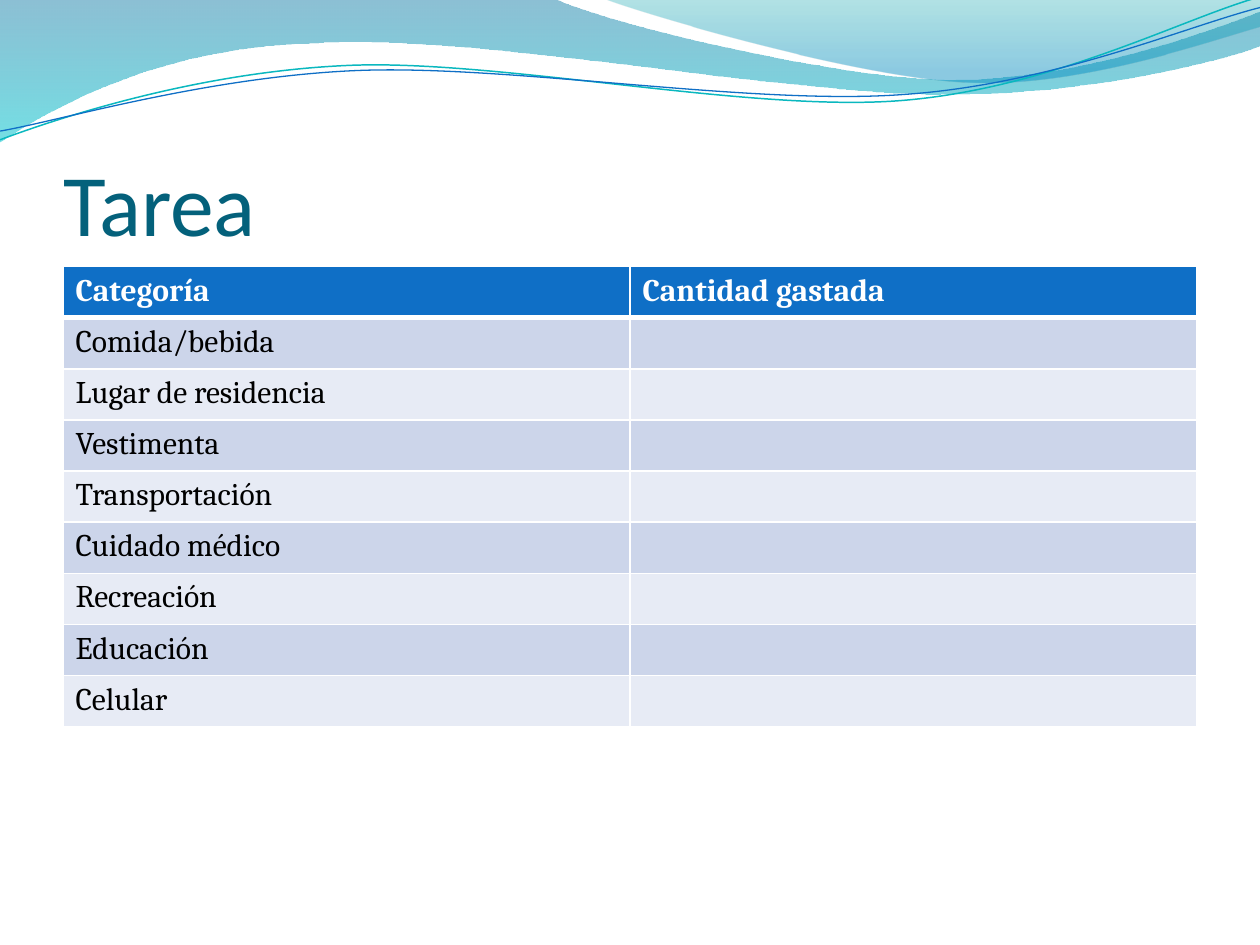
from lxml import etree
from pptx import Presentation
from pptx.dml import color
from pptx.enum import text
from pptx.oxml import ns
from pptx.util import Pt

ROWS = [
    ("Categoría", "Cantidad gastada"),
    ("Comida/bebida", ""),
    ("Lugar de residencia", ""),
    ("Vestimenta", ""),
    ("Transportación", ""),
    ("Cuidado médico", ""),
    ("Recreación", ""),
    ("Educación", ""),
    ("Celular", ""),
]


def rgb(code):
    return color.RGBColor.from_string(code)


def line(point):
    return [[point]]


def curve(*points):
    return [points[i:i + 3] for i in range(0, len(points), 3)]


def outline(slide, left, top, start, segments, close):
    builder = slide.shapes.build_freeform(Pt(start[0]), Pt(start[1]), scale=1.0)
    vertices = [(Pt(x), Pt(y)) for segment in segments for x, y in segment]
    builder.add_line_segments(vertices, close=close)
    shape = builder.convert_to_shape(Pt(left), Pt(top))
    shape.shadow.inherit = False
    steps = iter(list(shape._element.iter(ns.qn("a:lnTo"))))
    for segment in segments:
        first, *others = [next(steps) for _ in segment]
        if others:
            bezier = etree.Element(ns.qn("a:cubicBezTo"))
            first.addprevious(bezier)
            for step in (first, *others):
                bezier.append(step[0])
                step.getparent().remove(step)
    return shape


def add_wave(slide, left, top, start, segments, stops):
    wave = outline(slide, left, top, start, segments, True)
    wave.line.fill.background()
    wave.fill.gradient()
    wave.fill.gradient_angle = 270
    for stop, (position, code, _) in zip(wave.fill.gradient_stops, stops):
        stop.position = position
        stop.color.rgb = rgb(code)
    tints = wave.fill._xPr.iter(ns.qn("a:srgbClr"))
    for tint, (_, _, opacity) in zip(tints, stops):
        etree.SubElement(tint, ns.qn("a:alpha"), val=str(opacity * 1000))


def add_strand(slide, left, top, start, segments, code, width):
    strand = outline(slide, left, top, start, segments, False)
    strand.fill.background()
    strand.line.color.rgb = rgb(code)
    strand.line.width = Pt(width)


def add_waves(slide, left, top):
    broad = (
        line((316.8, -0.7))
        + curve((342.7, 12.2), (478.1, 45.4), (545.8, 45.4),
                (614.2, 45.4), (689.8, 18.7), (720, 6.5))
        + line((720.7, 25.9))
        + curve((707.8, 31.7), (626.4, 54.7), (537.1, 54),
                (447.8, 54), (275, 20.2), (185, 24.5),
                (92.9, 25.9), (33.1, 59.8), (-0.7, 81.4))
        + line((0, 0))
    )
    corner = (
        curve((366.5, 7.9), (491, 44.6), (553.7, 46.8),
              (616.3, 49.7), (691.9, 23), (720, 15.1))
        + line((720, 0))
        + line((344.9, -0.7))
    )
    teal = curve((34.6, 67), (113.8, 41), (199.4, 37.4),
                 (284.4, 33.8), (427, 64.1), (513.4, 57.6),
                 (599.8, 51.1), (675.4, 10.8), (718.6, -1.4))
    blue = curve((33.8, 69.1), (118.1, 43.9), (203.8, 40.3),
                 (290.2, 36.7), (429.8, 60.5), (516.2, 54),
                 (601.9, 48.2), (677.5, 15.1), (720, 4.3))
    add_wave(slide, left, top, (0, 0), broad,
             [(0, "0074A1", 45), (1, "00C6CF", 55)])
    add_wave(slide, left, top, (344.9, -0.7), corner,
             [(0, "00A1A9", 30), (0.8, "008BBF", 45)])
    add_strand(slide, left, top, (0, 79.9), teal, "0AB8BF", 0.85)
    add_strand(slide, left, top, (0, 74.9), blue, "0F6FC6", 0.75)


def style(paragraph, size, font, code, bold=False):
    paragraph.font.size = Pt(size)
    paragraph.font.name = font
    paragraph.font.color.rgb = rgb(code)
    paragraph.font.bold = bold


def add_title(slide, left, top, width, height):
    frame = slide.shapes.add_textbox(Pt(left), Pt(top), Pt(width), Pt(height)).text_frame
    frame.word_wrap = True
    frame.vertical_anchor = text.MSO_ANCHOR.BOTTOM
    frame.margin_left = frame.margin_right = frame.margin_bottom = 0
    frame.margin_top = Pt(3.6)
    heading = frame.paragraphs[0]
    heading.text = "Tarea"
    style(heading, 50, "Calibri", "04617B")


def add_borders(cell, widths):
    properties = cell._tc.get_or_add_tcPr()
    for side, width in widths.items():
        border = etree.SubElement(properties, ns.qn(f"a:ln{side}"), w=str(Pt(width)))
        fill = etree.SubElement(border, ns.qn("a:solidFill"))
        etree.SubElement(fill, ns.qn("a:srgbClr"), val="FFFFFF")


def add_expenses(slide, left, top, width, height):
    expenses = slide.shapes.add_table(
        len(ROWS), len(ROWS[0]), Pt(left), Pt(top), Pt(width), Pt(height)
    ).table
    for r, labels in enumerate(ROWS):
        header = r == 0
        band = "0F6FC6" if header else ("E7EBF5", "CCD5EA")[r % 2]
        for c, label in enumerate(labels):
            cell = expenses.cell(r, c)
            cell.text = label
            style(cell.text_frame.paragraphs[0], 18, "Cambria",
                  "FFFFFF" if header else "000000", header)
            add_borders(cell, {"L": 1, "R": 1, "T": 3 if r == 1 else 1, "B": 3 if header else 1})
            cell.fill.solid()
            cell.fill.fore_color.rgb = rgb(band)


def main():
    deck = Presentation()
    deck.slide_width, deck.slide_height = Pt(720), Pt(540)
    slide = deck.slides.add_slide(deck.slide_layouts[6])
    add_waves(slide, 0, 0)
    add_title(slide, 36.2, 55, 648, 90)
    add_expenses(slide, 36, 152.4, 648, 262.8)
    deck.save("out.pptx")


if __name__ == "__main__":
    main()
